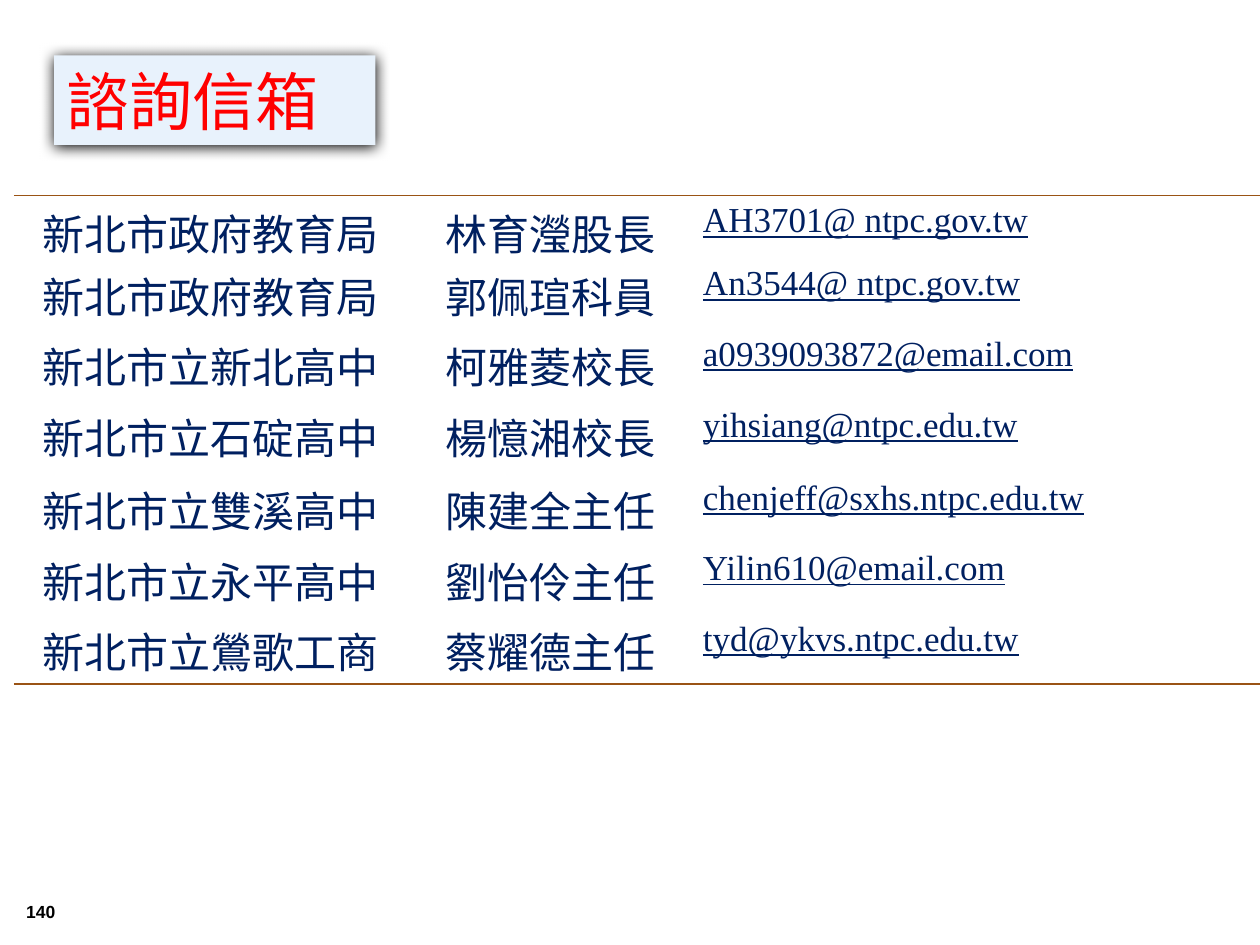
from lxml import etree
from pptx import Presentation
from pptx.dml.color import RGBColor
from pptx.enum.text import MSO_ANCHOR, PP_ALIGN
from pptx.oxml.ns import qn
from pptx.util import Inches, Pt

MIDDLE = MSO_ANCHOR.MIDDLE
LEFT, CENTER = PP_ALIGN.LEFT, PP_ALIGN.CENTER
NO_GRID = "{2D5ABB26-0587-4C30-8999-92F81FD0307C}"
NAVY, BROWN = "002060", "9A5315"

CONTACTS = [
    ("新北市政府教育局", "林育瀅股長", "AH3701@ ntpc.gov.tw"),
    ("新北市政府教育局", "郭佩瑄科員", "An3544@ ntpc.gov.tw"),
    ("新北市立新北高中", "柯雅菱校長", "a0939093872@email.com"),
    ("新北市立石碇高中", "楊憶湘校長", "yihsiang@ntpc.edu.tw"),
    ("新北市立雙溪高中", "陳建全主任", "chenjeff@sxhs.ntpc.edu.tw"),
    ("新北市立永平高中", "劉怡伶主任", "Yilin610@email.com"),
    ("新北市立鶯歌工商", "蔡耀德主任", "tyd@ykvs.ntpc.edu.tw"),
]
COLUMN_WIDTHS = [3.12, 2.28, 4.5]
ROW_HEIGHTS = [0.5, 0.56, 0.56, 0.58, 0.56, 0.56, 0.56]


def color(value):
    return RGBColor.from_string(value)


def add_element(parent, tag, **attributes):
    return etree.SubElement(parent, qn(tag), attributes)


class ContactSlide:
    """Holds the text styles and the slide, and draws each kind of element."""

    name_style = {"size": Pt(24), "name": "Noto Sans CJK TC", "bold": False}
    mail_style = {"size": Pt(20), "name": "Times New Roman", "underline": True}
    title_style = {"size": Pt(36), "name": "Noto Sans CJK SC", "bold": False}
    number_style = {"size": Pt(10), "name": "Arial", "bold": True}

    def __init__(self, slide):
        self.slide = slide

    def put_text(self, frame, text, style, ink, align=LEFT):
        paragraph = frame.paragraphs[0]
        paragraph.alignment = align
        run = paragraph.add_run()
        run.text = text
        for attribute, value in style.items():
            setattr(run.font, attribute, value)
        run.font.color.rgb = color(ink)
        add_element(run.font._element, "a:ea", typeface=style["name"])

    def title(self, text, left, top, width, height):
        heading = self.slide.shapes.title
        heading.left, heading.top = Inches(left), Inches(top)
        heading.width, heading.height = Inches(width), Inches(height)
        heading.fill.solid()
        heading.fill.fore_color.rgb = color("E8F2FC")
        effects = add_element(heading._element.spPr, "a:effectLst")
        shadow = add_element(effects, "a:outerShdw", blurRad=str(Pt(8.5)),
                             dist=str(Pt(1)), dir="5400000", algn="t", rotWithShape="0")
        add_element(shadow, "a:srgbClr", val="000000")
        heading.text_frame.vertical_anchor = MIDDLE
        self.put_text(heading.text_frame, text, self.title_style, "FF0000")

    def page_number(self, text, left, top, width, height):
        box = self.slide.shapes.add_textbox(
            Inches(left), Inches(top), Inches(width), Inches(height))
        box.text_frame.word_wrap = True
        box.text_frame.vertical_anchor = MIDDLE
        self.put_text(box.text_frame, text, self.number_style, "000000")

    def rule(self, cell, tag):
        line = add_element(cell._tc.get_or_add_tcPr(), tag, w=str(Pt(1)))
        fill = add_element(line, "a:solidFill")
        add_element(fill, "a:srgbClr", val=BROWN)

    def contact_table(self, contacts, left, top):
        table = self.slide.shapes.add_table(
            len(contacts), len(COLUMN_WIDTHS), Inches(left), Inches(top),
            Inches(sum(COLUMN_WIDTHS)), Inches(sum(ROW_HEIGHTS))).table
        table.first_row = table.horz_banding = False
        table._tbl.tblPr.find(qn("a:tableStyleId")).text = NO_GRID
        for column, width in zip(table.columns, COLUMN_WIDTHS):
            column.width = Inches(width)
        for index, (row, contact) in enumerate(zip(table.rows, contacts)):
            row.height = Inches(ROW_HEIGHTS[index])
            for cell, text in zip(row.cells, contact):
                is_mail = "@" in text
                cell.margin_left = cell.margin_right = Inches(0.07)
                cell.margin_top = cell.margin_bottom = Inches(0.05)
                if index == 0:
                    self.rule(cell, "a:lnT")
                if index == len(contacts) - 1:
                    self.rule(cell, "a:lnB")
                cell.fill.background()
                self.put_text(cell.text_frame, text,
                              self.mail_style if is_mail else self.name_style,
                              NAVY, LEFT if is_mail else CENTER)


def main():
    deck = Presentation()
    deck.slide_width, deck.slide_height = Inches(10), Inches(7.5)
    page = ContactSlide(deck.slides.add_slide(deck.slide_layouts[5]))
    page.page_number("140", 0.11, 7.11, 0.62, 0.25)
    page.title("諮詢信箱", 0.43, 0.44, 2.55, 0.71)
    page.contact_table(CONTACTS, 0.11, 1.55)
    deck.save("out.pptx")


if __name__ == "__main__":
    main()
